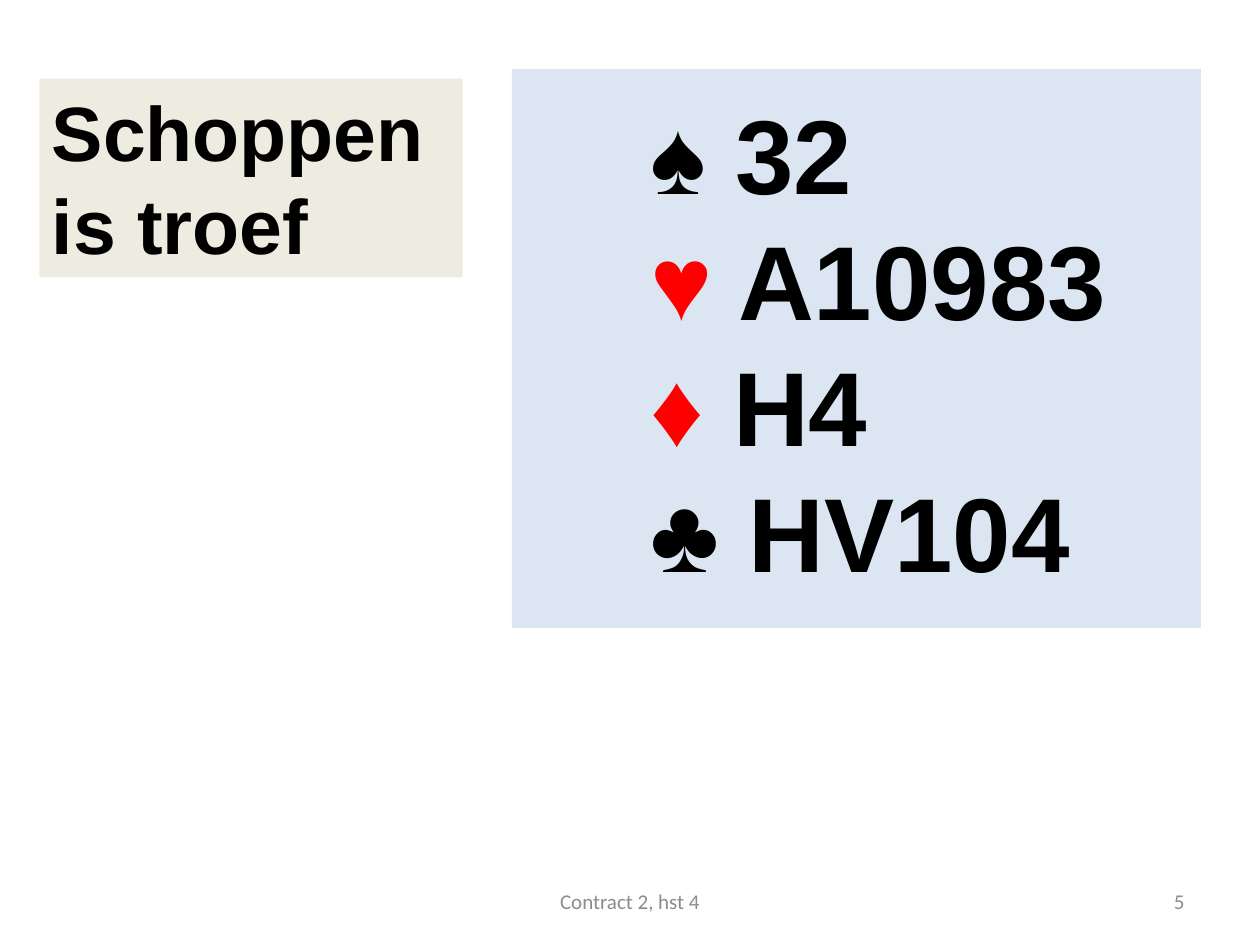
"""Build a bridge slide showing one hand and its trump suit."""
import pptx
import pptx.dml.color
import pptx.enum.shapes
import pptx.enum.text
import pptx.util

Pt = pptx.util.Pt
ALIGN = pptx.enum.text.PP_ALIGN
ANCHOR = pptx.enum.text.MSO_ANCHOR
BLACK, RED, GREY = "000000", "FF0000", "8C8C8C"
HAND = [("♠", BLACK, "32"), ("♥", RED, "A10983"), ("♦", RED, "H4"), ("♣", BLACK, "HV104")]


def rgb(value):
    return pptx.dml.color.RGBColor.from_string(value)


def add_run(p, text, size, color=BLACK, font="Arial", bold=True):
    r = p.add_run()
    r.text = text
    r.font.name = font
    r.font.size = Pt(size)
    r.font.bold = bold
    r.font.color.rgb = rgb(color)


def add_panel(s, left, top, width, height, fill):
    sp = s.shapes.add_shape(pptx.enum.shapes.MSO_SHAPE.RECTANGLE,
                            Pt(left), Pt(top), Pt(width), Pt(height))
    sp.shadow.inherit = False
    sp.fill.solid()
    sp.fill.fore_color.rgb = rgb(fill)
    sp.line.fill.background()
    tf = sp.text_frame
    tf.word_wrap = True
    tf.vertical_anchor = ANCHOR.TOP
    tf.paragraphs[0].alignment = ALIGN.LEFT
    return tf


def add_hand(s):
    tf = add_panel(s, 292.5, 39.5, 393.75, 319.5, "DCE6F2")
    tf.margin_left = Pt(79.2)
    tf.margin_top, tf.margin_bottom = Pt(11.5), Pt(17.3)
    for i, (suit, color, cards) in enumerate(HAND):
        p = tf.add_paragraph() if i else tf.paragraphs[0]
        p.alignment = ALIGN.LEFT
        add_run(p, suit, 60, color)
        add_run(p, f" {cards}", 60)


def add_footer(s, left, width, text, align):
    tf = s.shapes.add_textbox(Pt(left), Pt(500.5), Pt(width), Pt(28.75)).text_frame
    tf.word_wrap = True
    tf.vertical_anchor = ANCHOR.MIDDLE
    p = tf.paragraphs[0]
    p.alignment = align
    add_run(p, text, 12, GREY, "Calibri", False)


def main():
    prs = pptx.Presentation()
    prs.slide_width, prs.slide_height = Pt(720), Pt(540)
    s = prs.slides.add_slide(prs.slide_layouts[6])
    add_hand(s)
    trump = add_panel(s, 22.5, 45, 241.9, 113.5, "EEECE1")
    add_run(trump.paragraphs[0], "Schoppen is troef", 44)
    add_footer(s, 516, 168, "5", ALIGN.RIGHT)
    add_footer(s, 246, 228, "Contract 2, hst 4", ALIGN.CENTER)
    prs.save("out.pptx")


if __name__ == "__main__":
    main()
